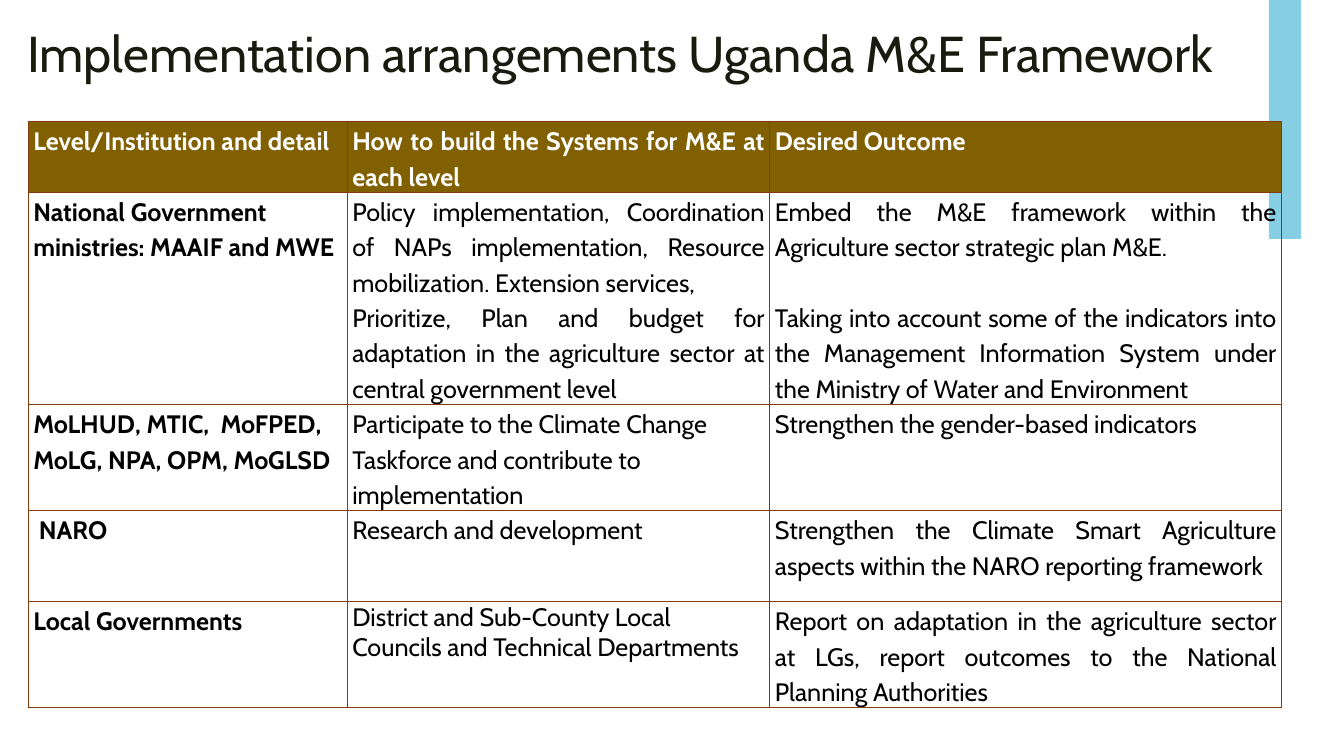
from lxml.etree import SubElement
from pptx import Presentation
from pptx.dml.color import RGBColor
from pptx.enum.shapes import MSO_SHAPE
from pptx.enum.text import MSO_ANCHOR, MSO_AUTO_SIZE, PP_ALIGN
from pptx.oxml.ns import qn
from pptx.util import Cm, Pt

LEFT, JUSTIFY = PP_ALIGN.LEFT, PP_ALIGN.JUSTIFY

COLUMN_WIDTHS = [8.04, 10.65, 12.9]
ROW_HEIGHTS = [1.63, 5.0, 2.46, 2.29, 2.29]

# Each cell: alignment, then its paragraphs
ROWS = [
    [(LEFT, ["Level/Institution and detail"]),
     (JUSTIFY, ["How to build the Systems for M&E at each level"]),
     (LEFT, ["Desired Outcome"])],
    [(LEFT, ["National Government ministries: MAAIF and MWE"]),
     (JUSTIFY, ["Policy implementation, Coordination of NAPs implementation, "
                "Resource mobilization. Extension services,",
                "Prioritize, Plan and budget for adaptation in the agriculture "
                "sector at central government level"]),
     (JUSTIFY, ["Embed the M&E framework within the Agriculture sector "
                "strategic plan M&E.",
                "Taking into account some of the indicators into the Management "
                "Information System under the Ministry of Water and Environment"])],
    [(LEFT, ["MoLHUD, MTIC,  MoFPED, MoLG, NPA, OPM, MoGLSD"]),
     (LEFT, ["Participate to the Climate Change Taskforce and contribute to "
             "implementation"]),
     (JUSTIFY, ["Strengthen the gender-based indicators"])],
    [(LEFT, ["NARO"]),
     (JUSTIFY, ["Research and development"]),
     (JUSTIFY, ["Strengthen the Climate Smart Agriculture aspects within the "
                "NARO reporting framework"])],
    [(LEFT, ["Local Governments"]),
     (LEFT, ["District and Sub-County Local Councils and Technical Departments"]),
     (JUSTIFY, ["Report on adaptation in the agriculture sector at LGs, report "
                "outcomes to the National Planning Authorities"])],
]


def color(value):
    return RGBColor.from_string(value)


class SlideBuilder:
    font = "Cabin"
    ink, text, white = "191B0E", "000000", "FFFFFF"
    accent, header, border = "86CEE3", "806000", "833C0B"

    def __init__(self, slide):
        self.slide = slide

    def add_run(self, paragraph, text, size, hex_color, bold=False):
        run = paragraph.add_run()
        run.text = text
        run.font.name = self.font
        run.font.size = Pt(size)
        run.font.bold = bold
        run.font.color.rgb = color(hex_color)

    def add_stripe(self, left, top, width, height):
        shape = self.slide.shapes.add_shape(
            MSO_SHAPE.RECTANGLE, Cm(left), Cm(top), Cm(width), Cm(height))
        shape.shadow.inherit = False
        shape.fill.solid()
        shape.fill.fore_color.rgb = color(self.accent)
        shape.line.fill.background()

    def set_title(self, text, left, top, width, height):
        title = self.slide.shapes.title
        title.left, title.top = Cm(left), Cm(top)
        title.width, title.height = Cm(width), Cm(height)
        frame = title.text_frame
        frame.word_wrap = True
        frame.auto_size = MSO_AUTO_SIZE.NONE
        frame.vertical_anchor = MSO_ANCHOR.TOP
        paragraph = frame.paragraphs[0]
        paragraph.alignment = LEFT
        paragraph.line_spacing = 0.89
        self.add_run(paragraph, text, 36, self.ink)

    def add_borders(self, cell):
        properties = cell._tc.get_or_add_tcPr()
        for position, side in enumerate(("a:lnL", "a:lnR", "a:lnT", "a:lnB")):
            line = SubElement(properties, qn(side), w=str(Pt(1)))
            fill = SubElement(line, qn("a:solidFill"))
            SubElement(fill, qn("a:srgbClr"), val=self.border)
            properties.insert(position, line)

    def fill_cell(self, cell, alignment, texts, is_header, bold):
        cell.margin_left = cell.margin_right = Cm(0.13)
        cell.margin_top = cell.margin_bottom = 0
        if is_header:
            cell.fill.solid()
            cell.fill.fore_color.rgb = color(self.header)
        else:
            cell.fill.background()
        self.add_borders(cell)
        frame = cell.text_frame
        for index, text in enumerate(texts):
            paragraph = frame.add_paragraph() if index else frame.paragraphs[0]
            paragraph.alignment = alignment
            paragraph.line_spacing = 1.15
            self.add_run(paragraph, text, 18,
                         self.white if is_header else self.text, bold)

    def add_table(self, left, top, widths, heights, rows):
        table = self.slide.shapes.add_table(
            len(rows), len(widths), Cm(left), Cm(top),
            Cm(sum(widths)), Cm(sum(heights))).table
        table.horz_banding = False
        for column, width in zip(table.columns, widths):
            column.width = Cm(width)
        for row, height in zip(table.rows, heights):
            row.height = Cm(height)
        for r, row in enumerate(rows):
            for c, (alignment, texts) in enumerate(row):
                self.fill_cell(table.cell(r, c), alignment, texts,
                               r == 0, r == 0 or c == 0)
        return table


def main():
    presentation = Presentation()
    presentation.slide_width, presentation.slide_height = Cm(33.87), Cm(19.05)
    slide = presentation.slides.add_slide(presentation.slide_layouts[5])
    builder = SlideBuilder(slide)

    # Side stripe and title
    builder.add_stripe(31.98, 0, 0.81, 6.02)
    builder.set_title("Implementation arrangements Uganda M&E Framework",
                      0.43, 0.61, 32.16, 1.93)

    # Institutions table
    table = builder.add_table(0.71, 3.07, COLUMN_WIDTHS, ROW_HEIGHTS, ROWS)

    # Cells that depart from the rule: a one-line gap, an indent, single spacing
    table.cell(1, 2).text_frame.paragraphs[1].space_before = Pt(25.2)
    table.cell(3, 0).margin_left = Cm(0.27)
    table.cell(4, 1).text_frame.paragraphs[0].line_spacing = 1.0

    presentation.save("out.pptx")


if __name__ == "__main__":
    main()
